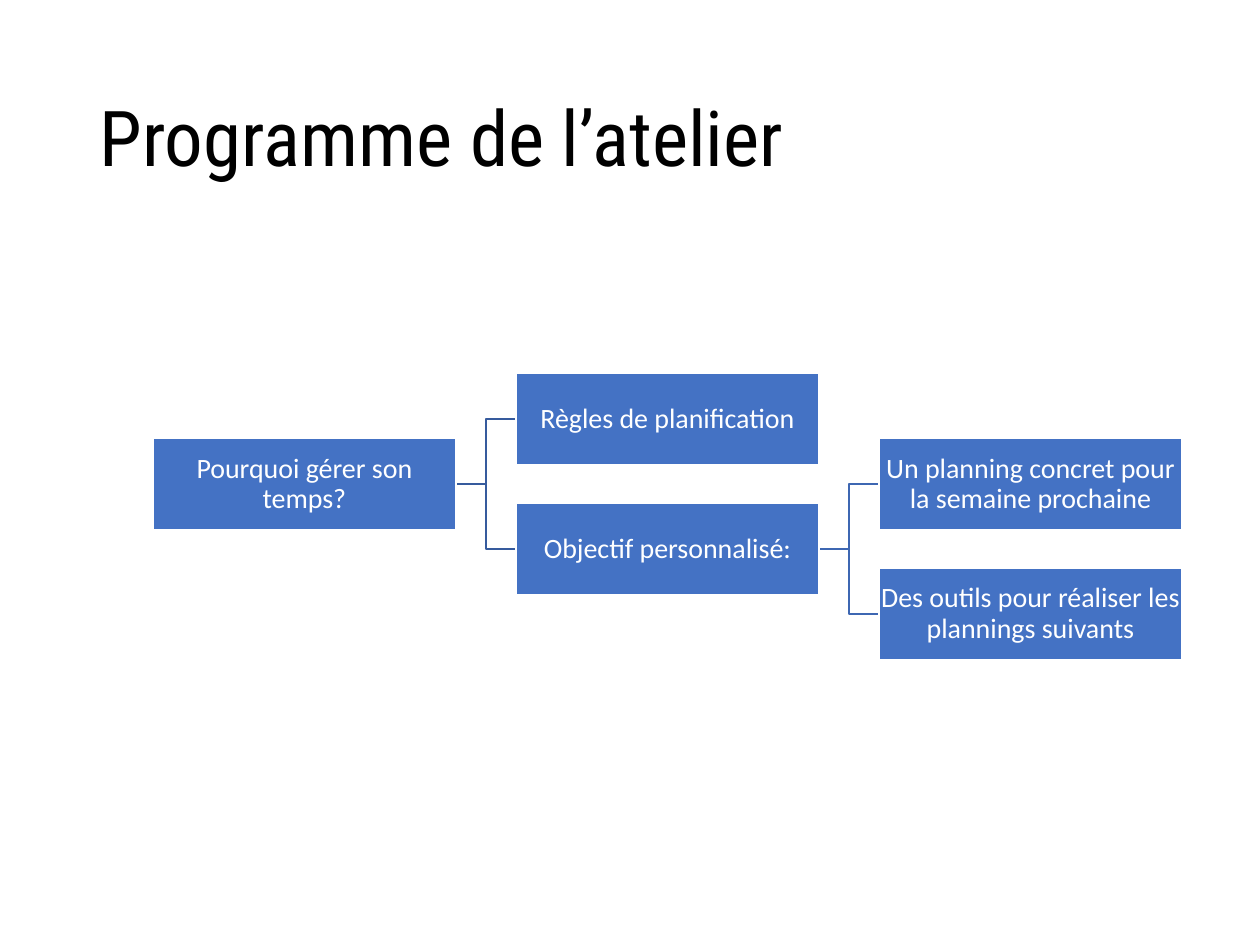
from pptx import Presentation
from pptx import util as u
from pptx.dml.color import RGBColor
from pptx.enum import shapes, text

SCALE = u.Inches(1) / 126  # EMU per px
BOX_W, BOX_H = 303, 92
LEFT, COL_STEP = 153, 363
TOP_ROW, ROW_STEP = 419, 65


def px(n):
    return u.Emu(round(n * SCALE))


def rgb(code):
    return RGBColor.from_string(code)


def place(col, row):
    """Left edge and vertical centre of a box; rows are half a box pitch apart."""
    return LEFT + col * COL_STEP, TOP_ROW + row * ROW_STEP


class Deck:
    title_font, body_font = "Roboto Condensed", "Calibri"
    ink, white, blue = "000000", "FFFFFF", "4472C4"

    def __init__(self, width, height):
        self.prs = Presentation()
        self.prs.slide_width, self.prs.slide_height = px(width), px(height)
        self.s = self.prs.slides.add_slide(self.prs.slide_layouts[5])

    def set_text(self, tf, words, font, size, color, align):
        tf.word_wrap = True
        tf.auto_size = text.MSO_AUTO_SIZE.NONE
        tf.vertical_anchor = text.MSO_ANCHOR.MIDDLE
        tf.text = words
        p = tf.paragraphs[0]
        p.alignment, p.line_spacing = align, 0.9
        p.font.name, p.font.size = font, u.Pt(size)
        p.font.color.rgb = rgb(color)

    def title(self, words, x, y, w, h):
        sp = self.s.shapes.title
        sp.left, sp.top, sp.width, sp.height = map(px, (x, y, w, h))
        self.set_text(sp.text_frame, words, self.title_font, 44, self.ink,
                      text.PP_ALIGN.LEFT)

    def box(self, words, spot):
        x, mid = spot
        sp = self.s.shapes.add_shape(
            shapes.MSO_SHAPE.RECTANGLE,
            *map(px, (x, mid - BOX_H // 2, BOX_W, BOX_H)))
        sp.shadow.inherit = False
        sp.fill.solid()
        sp.fill.fore_color.rgb = rgb(self.blue)
        sp.line.color.rgb = rgb(self.white)
        sp.line.width = u.Pt(1)
        tf = sp.text_frame
        tf.margin_left = tf.margin_right = px(1)
        tf.margin_top = tf.margin_bottom = px(1)
        self.set_text(tf, words, self.body_font, 16, self.white,
                      text.PP_ALIGN.CENTER)

    def branch(self, parent, child, color):
        """Draw the bent line from a parent's right side to a child's left side."""
        x1, y1 = parent[0] + BOX_W, parent[1]
        x2, y2 = child
        bend = (x1 + x2) // 2
        fb = self.s.shapes.build_freeform(x1, y1, scale=SCALE)
        fb.add_line_segments([(bend, y1), (bend, y2), (x2, y2)], close=False)
        sp = fb.convert_to_shape()
        sp.shadow.inherit = False
        sp.fill.background()
        sp.line.color.rgb = rgb(color)
        sp.line.width = u.Pt(1)


def main():
    deck = Deck(1260, 945)
    deck.title("Programme de l’atelier", 87, 50, 1086, 183)

    why, rules, goal = place(0, 1), place(1, 0), place(1, 2)
    planning, tools = place(2, 1), place(2, 3)

    for parent, child, color in [
        (goal, tools, "3E67B2"),
        (goal, planning, "3E67B2"),
        (why, goal, "365B9D"),
        (why, rules, "365B9D"),
    ]:
        deck.branch(parent, child, color)

    for words, spot in [
        ("Pourquoi gérer son temps?", why),
        ("Règles de planification", rules),
        ("Objectif personnalisé:", goal),
        ("Un planning concret pour la semaine prochaine", planning),
        ("Des outils pour réaliser les plannings suivants", tools),
    ]:
        deck.box(words, spot)

    deck.prs.save("out.pptx")


if __name__ == "__main__":
    main()
